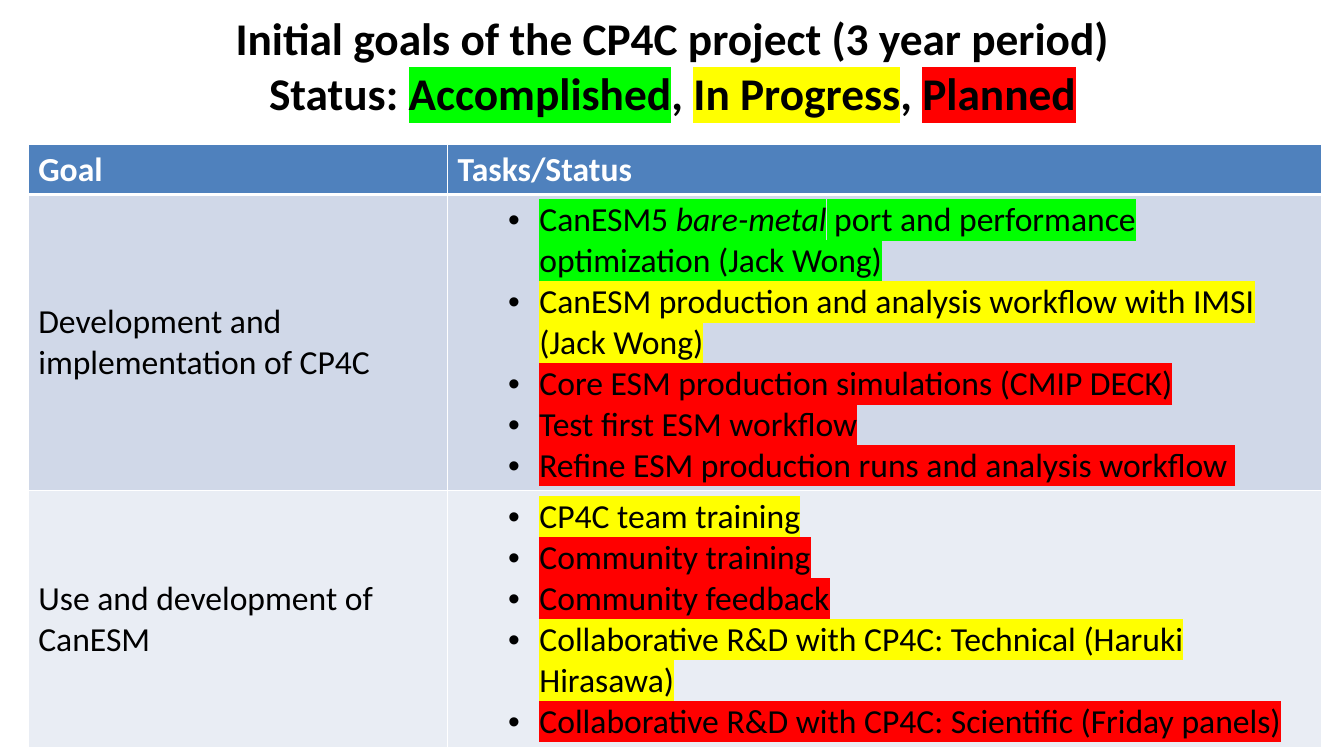
from dataclasses import dataclass

from lxml.etree import SubElement
from pptx import Presentation
from pptx.dml.color import RGBColor
from pptx.enum.text import MSO_ANCHOR as Anchor, PP_ALIGN as Align
from pptx.oxml import parse_xml
from pptx.oxml.ns import nsdecls, qn
from pptx.util import Pt

PX = 9144
FONT = "Calibri"
BLACK, WHITE = "000000", "FFFFFF"
HEADER_FILL = "4F81BD"
DONE, ACTIVE, PLANNED = "00FF00", "FFFF00", "FF0000"
TITLE_SIZE, TABLE_SIZE = 32.4, 24
COLUMN_WIDTHS = (416, 867)
ROW_HEIGHTS = (50, 294, 255)
BULLET_MARGIN, BULLET_INDENT = 81, -31


@dataclass(frozen=True)
class Piece:
    text: str
    highlight: str | None = None
    italic: bool = False


@dataclass(frozen=True)
class Goal:
    name: str
    fill: str
    tasks: tuple[tuple[Piece, ...], ...]


TITLE_LINES = (
    (Piece("Initial goals of the CP4C project (3 year period)"),),
    (
        Piece("Status: "),
        Piece("Accomplished", DONE),
        Piece(", "),
        Piece("In Progress", ACTIVE),
        Piece(", "),
        Piece("Planned", PLANNED),
    ),
)
HEADERS = ("Goal", "Tasks/Status")
GOALS = (
    Goal("Development and implementation of CP4C", "D0D8E8", (
        (
            Piece("CanESM5 ", DONE),
            Piece("bare-metal", DONE, italic=True),
            Piece(" port and performance optimization (Jack Wong)", DONE),
        ),
        (Piece("CanESM production and analysis workflow with IMSI (Jack Wong)", ACTIVE),),
        (Piece("Core ESM production simulations (CMIP DECK)", PLANNED),),
        (Piece("Test first ESM workflow", PLANNED),),
        (Piece("Refine ESM production runs and analysis workflow ", PLANNED),),
    )),
    Goal("Use and development of CanESM", "E9EDF4", (
        (Piece("CP4C team training", ACTIVE),),
        (Piece("Community training", PLANNED),),
        (Piece("Community feedback", PLANNED),),
        (Piece("Collaborative R&D with CP4C: Technical (Haruki Hirasawa)", ACTIVE),),
        (Piece("Collaborative R&D with CP4C: Scientific (Friday panels)", PLANNED),),
    )),
)


def px(length: int) -> int:
    return length * PX


def color(value: str) -> RGBColor:
    return RGBColor.from_string(value)


def add_piece(paragraph, piece: Piece, size: float, ink: str = BLACK, bold: bool = False) -> None:
    run = paragraph.add_run()
    run.text = piece.text
    font = run.font
    font.name, font.size, font.bold, font.italic = FONT, Pt(size), bold, piece.italic
    font.color.rgb = color(ink)
    if piece.highlight:
        properties = run._r.get_or_add_rPr()
        highlight = SubElement(properties, qn("a:highlight"))
        SubElement(highlight, qn("a:srgbClr"), val=piece.highlight)
        properties.find(qn("a:solidFill")).addnext(highlight)


def add_bullet(paragraph) -> None:
    paragraph.level = 1
    properties = paragraph._p.get_or_add_pPr()
    properties.set("marL", str(px(BULLET_MARGIN)))
    properties.set("indent", str(px(BULLET_INDENT)))
    SubElement(properties, qn("a:buFont"), typeface="Arial")
    SubElement(properties, qn("a:buChar"), char="•")


def style_cell(cell, fill: str, bottom_width: int = 1) -> None:
    cell.vertical_anchor = Anchor.MIDDLE
    cell.fill.solid()
    cell.fill.fore_color.rgb = color(fill)
    properties = cell._tc.get_or_add_tcPr()
    for index, side in enumerate("LRTB"):
        width = Pt(bottom_width if side == "B" else 1)
        properties.insert(index, parse_xml(
            f'<a:ln{side} {nsdecls("a")} w="{width}"><a:solidFill>'
            f'<a:srgbClr val="{WHITE}"/></a:solidFill></a:ln{side}>'
        ))


def add_title(slide) -> None:
    box = slide.shapes.add_textbox(px(67), px(2), px(1200), px(125))
    frame = box.text_frame
    frame.word_wrap = True
    frame.vertical_anchor = Anchor.MIDDLE
    paragraph = frame.paragraphs[0]
    paragraph.alignment = Align.CENTER
    for index, line in enumerate(TITLE_LINES):
        if index:
            paragraph.add_line_break()
        for piece in line:
            add_piece(paragraph, piece, TITLE_SIZE, bold=True)


def add_goal_table(slide) -> None:
    table = slide.shapes.add_table(
        len(ROW_HEIGHTS), len(COLUMN_WIDTHS), px(28), px(143),
        px(sum(COLUMN_WIDTHS)), px(sum(ROW_HEIGHTS)),
    ).table
    for column, width in zip(table.columns, COLUMN_WIDTHS):
        column.width = px(width)
    for row, height in zip(table.rows, ROW_HEIGHTS):
        row.height = px(height)

    for index, header in enumerate(HEADERS):
        cell = table.cell(0, index)
        style_cell(cell, HEADER_FILL, bottom_width=3)
        add_piece(cell.text_frame.paragraphs[0], Piece(header), TABLE_SIZE, WHITE, bold=True)

    for index, goal in enumerate(GOALS, start=1):
        name_cell, task_cell = table.cell(index, 0), table.cell(index, 1)
        for cell in (name_cell, task_cell):
            style_cell(cell, goal.fill)
        add_piece(name_cell.text_frame.paragraphs[0], Piece(goal.name), TABLE_SIZE)
        frame = task_cell.text_frame
        for position, task in enumerate(goal.tasks):
            paragraph = frame.add_paragraph() if position else frame.paragraphs[0]
            add_bullet(paragraph)
            for piece in task:
                add_piece(paragraph, piece, TABLE_SIZE)


def main() -> None:
    presentation = Presentation()
    presentation.slide_width, presentation.slide_height = px(1333), px(750)
    slide = presentation.slides.add_slide(presentation.slide_layouts[6])
    add_title(slide)
    add_goal_table(slide)
    presentation.save("out.pptx")


if __name__ == "__main__":
    main()
